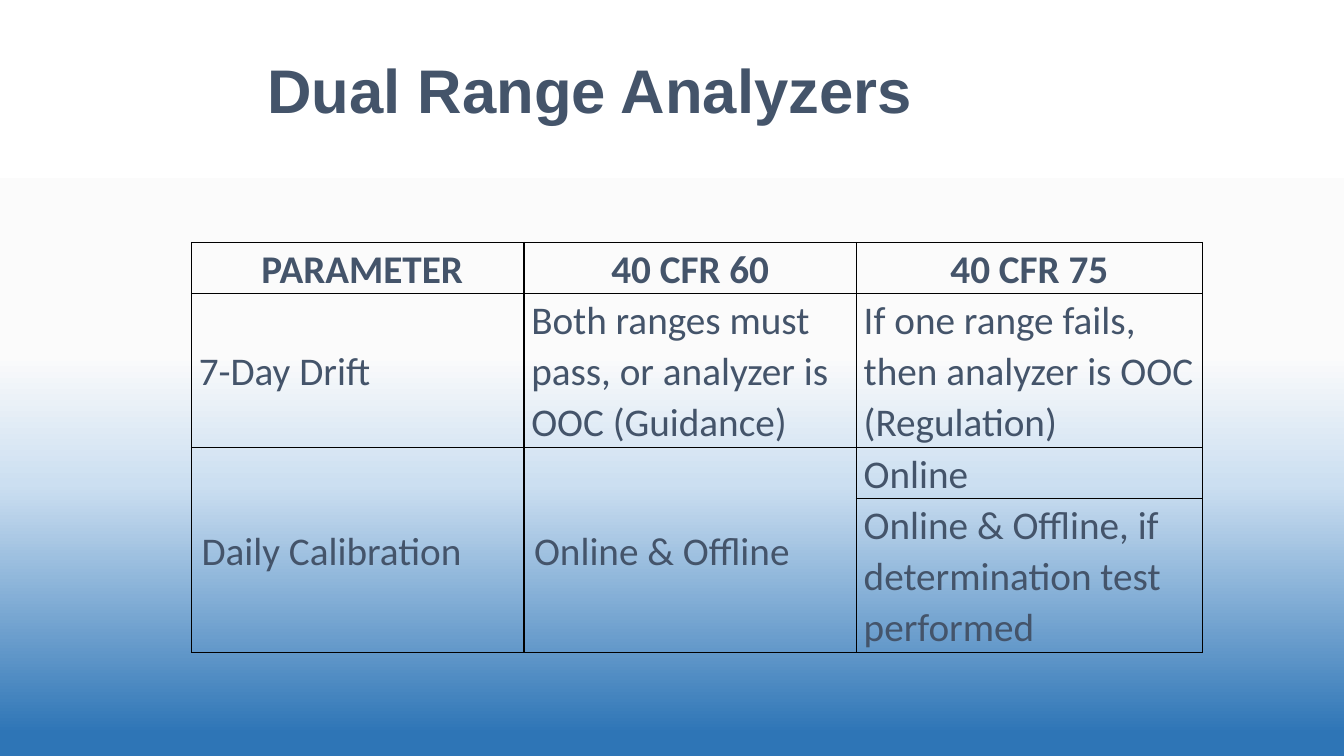
"""Build the Dual Range Analyzers slide."""
from pptx import Presentation
from pptx.dml.color import RGBColor
from pptx.enum.text import MSO_ANCHOR, PP_ALIGN
from pptx.oxml import parse_xml
from pptx.oxml.ns import nsdecls, qn
from pptx.util import Pt

TITLE = "Dual Range Analyzers"
ROWS = [
    [" PARAMETER", "40 CFR 60", "40 CFR 75"],
    ["7-Day Drift", "Both ranges must pass, or analyzer is OOC (Guidance)",
     "If one range fails, then analyzer is OOC (Regulation)"],
    ["Daily Calibration", "Online & Offline", "Online"],
    ["", "", "Online & Offline, if determination test performed"],
]
COL_WIDTHS = [237.5, 237.5, 247]
ROW_HEIGHTS = [34, 105, 34, 105]
MERGED_ROW, MERGED_COLS = 2, (0, 1)

SLATE = RGBColor(0x44, 0x54, 0x6A)
BLACK = RGBColor(0x00, 0x00, 0x00)
BACKGROUND = [
    (0, RGBColor(0xFF, 0xFF, 0xFF)),
    (47, RGBColor(0xFB, 0xFB, 0xFB)),
    (64, RGBColor(0xCC, 0xDF, 0xF1)),
    (97, RGBColor(0x2E, 0x75, 0xB6)),
]


def style(p, font, size, bold, align, spacing):
    p.alignment, p.line_spacing = align, spacing
    p.font.name, p.font.size, p.font.bold = font, Pt(size), bold
    p.font.color.rgb = SLATE


def set_background(s):
    fill = s.background.fill
    fill.gradient()
    fill.gradient_angle = 270
    stops = s.element.find(".//" + qn("a:gsLst"))
    for stop in list(stops):
        stops.remove(stop)
    for percent, color in BACKGROUND:
        stops.append(parse_xml(
            f'<a:gs {nsdecls("a")} pos="{percent * 1000}">'
            f'<a:srgbClr val="{color}"/></a:gs>'))


def set_borders(cell):
    props = cell._tc.get_or_add_tcPr()
    for i, side in enumerate(("lnL", "lnR", "lnT", "lnB")):
        props.insert(i, parse_xml(
            f'<a:{side} {nsdecls("a")} w="{Pt(1)}"><a:solidFill>'
            f'<a:srgbClr val="{BLACK}"/></a:solidFill></a:{side}>'))


def add_title(s):
    title = s.shapes.title
    title.left, title.top, title.width, title.height = Pt(51), Pt(36), Pt(741), Pt(62)
    tf = title.text_frame
    tf.text = TITLE
    tf.vertical_anchor = MSO_ANCHOR.MIDDLE
    style(tf.paragraphs[0], "Arial", 44, True, PP_ALIGN.CENTER, 0.9)


def add_parameters(s):
    table = s.shapes.add_table(
        len(ROWS), len(COL_WIDTHS), Pt(136.8), Pt(173.2),
        Pt(sum(COL_WIDTHS)), Pt(sum(ROW_HEIGHTS))).table
    table.first_row = table.horz_banding = False
    for column, width in zip(table.columns, COL_WIDTHS):
        column.width = Pt(width)
    for row, height in zip(table.rows, ROW_HEIGHTS):
        row.height = Pt(height)
    for r, texts in enumerate(ROWS):
        header = r == 0
        for c, text in enumerate(texts):
            cell = table.cell(r, c)
            merged = r >= MERGED_ROW and c in MERGED_COLS
            cell.text = text
            cell.fill.background()
            set_borders(cell)
            cell.margin_left = cell.margin_right = Pt(7.2 if merged else 5.2)
            cell.margin_top = cell.margin_bottom = Pt(3.6 if merged else 0)
            cell.vertical_anchor = MSO_ANCHOR.TOP if header else MSO_ANCHOR.MIDDLE
            align = PP_ALIGN.CENTER if header else PP_ALIGN.LEFT
            style(cell.text_frame.paragraphs[0], "Calibri", 28, header, align, 1.07)
    for c in MERGED_COLS:
        table.cell(MERGED_ROW, c).merge(table.cell(MERGED_ROW + 1, c))


def main():
    prs = Presentation()
    prs.slide_width, prs.slide_height = Pt(960), Pt(540)
    s = prs.slides.add_slide(prs.slide_layouts[5])
    set_background(s)
    add_title(s)
    add_parameters(s)
    prs.save("out.pptx")


if __name__ == "__main__":
    main()
